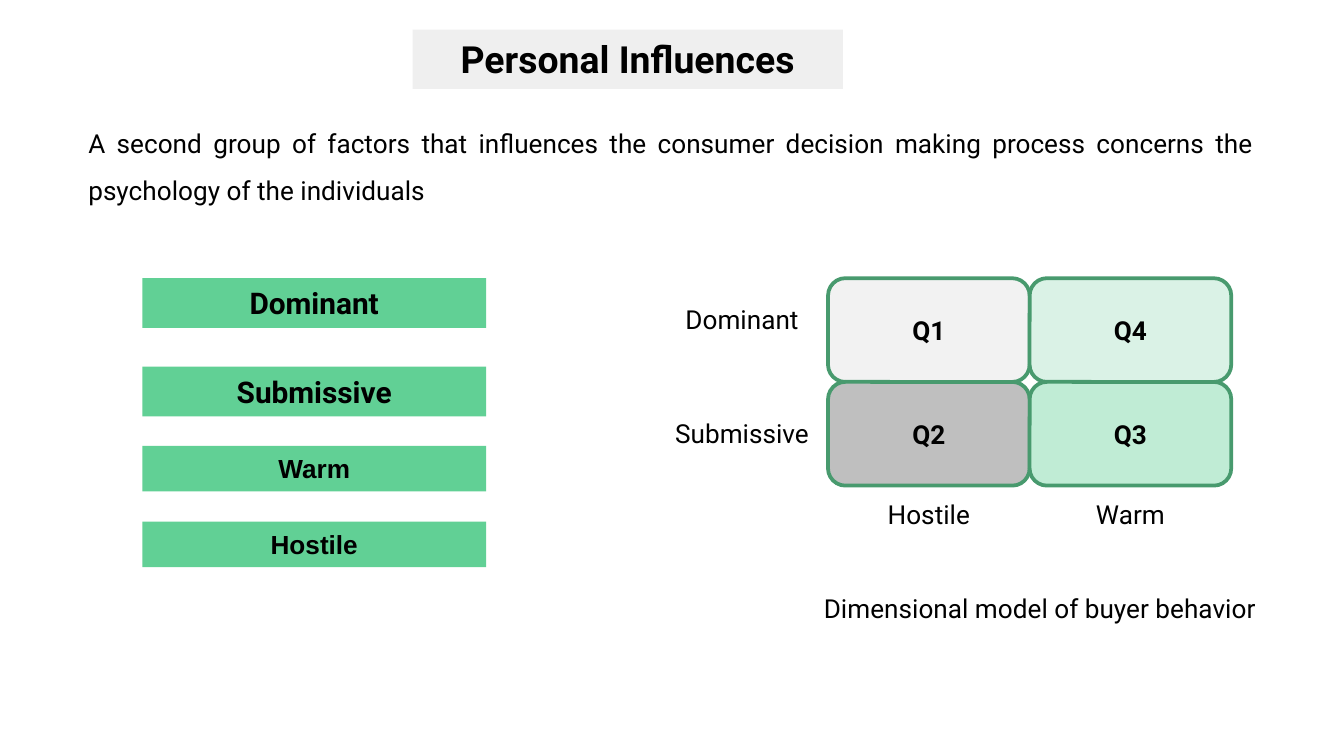
from pptx import Presentation
from pptx.dml.color import RGBColor
from pptx.enum.shapes import MSO_SHAPE
from pptx.enum.text import MSO_ANCHOR, PP_ALIGN
from pptx.util import Cm, Pt

TITLE = "Personal Influences"
INTRO = ("A second group of factors that influences the consumer decision "
         "making process concerns the psychology of the individuals")
CAPTION = "Dimensional model of buyer behavior"
# text, top, height, size, font
TRAITS = [
    ("Dominant", 5.26, 0.94, 16, "Roboto"),
    ("Submissive", 6.93, 0.94, 16, "Roboto"),
    ("Warm", 8.43, 0.86, 14, "Arial"),
    ("Hostile", 9.86, 0.86, 14, "Arial"),
]
GRID = [
    [("Q1", "F2F2F2"), ("Q4", "DAF2E6")],
    [("Q2", "BFBFBF"), ("Q3", "C0ECD5")],
]
ROWS = [("Dominant", 5.61), ("Submissive", 7.77)]
COLS = ["Hostile", "Warm"]
LEFT, TOP, CELL_W, CELL_H = 15.65, 5.26, 3.81, 1.96
ROW_W, COL_W, LINE_H = 3.25, 3.4, 0.86


def color(code):
    return RGBColor.from_string(code)


def write(shape, text, size=14, font="Roboto", bold=False,
          align=PP_ALIGN.CENTER, anchor=MSO_ANCHOR.TOP):
    frame = shape.text_frame
    frame.word_wrap = True
    frame.vertical_anchor = anchor
    para = frame.paragraphs[0]
    para.alignment = align
    run = para.add_run()
    run.text = text
    run.font.name = font
    run.font.size = Pt(size)
    run.font.bold = bold
    run.font.color.rgb = color("000000")
    return para


def paint(shape, fill, line=None):
    shape.fill.solid()
    shape.fill.fore_color.rgb = color(fill)
    if line:
        shape.line.color.rgb = color(line)
        shape.line.width = Pt(2)
    else:
        shape.line.fill.background()


def add_block(kind, box, fill, line=None):
    shape = slide.shapes.add_shape(kind, *map(Cm, box))
    shape.shadow.inherit = False
    paint(shape, fill, line)
    return shape


def add_label(box, text, align=PP_ALIGN.CENTER):
    return write(slide.shapes.add_textbox(*map(Cm, box)), text, align=align)


deck = Presentation()
deck.slide_width, deck.slide_height = Cm(25.4), Cm(14.29)
slide = deck.slides.add_slide(deck.slide_layouts[5])

title = slide.shapes.title
title.left, title.top, title.width, title.height = map(Cm, (7.8, 0.56, 8.13, 1.12))
paint(title, "EFEFEF")
write(title, TITLE, 20, bold=True)

intro = add_label((1.42, 1.98, 22.53, 1.96), INTRO, PP_ALIGN.JUSTIFY)
intro.line_spacing = 1.5

for text, top, high, size, font in TRAITS:
    bar = add_block(MSO_SHAPE.RECTANGLE, (2.69, top, 6.5, high), "61D095")
    write(bar, text, size, font, bold=True)

for i, row in enumerate(GRID):
    for j, (text, fill) in enumerate(row):
        box = (LEFT + j * CELL_W, TOP + i * CELL_H, CELL_W, CELL_H)
        cell = add_block(MSO_SHAPE.ROUNDED_RECTANGLE, box, fill, "489A6E")
        write(cell, text, bold=True, anchor=MSO_ANCHOR.MIDDLE)

for text, top in ROWS:
    add_label((LEFT - ROW_W, top, ROW_W, LINE_H), text)
for j, text in enumerate(COLS):
    left = LEFT + j * CELL_W + (CELL_W - COL_W) / 2
    add_label((left, 9.3, COL_W, LINE_H), text)
add_label((15.32, 11.07, 9.6, LINE_H), CAPTION, PP_ALIGN.LEFT)

deck.save("out.pptx")
